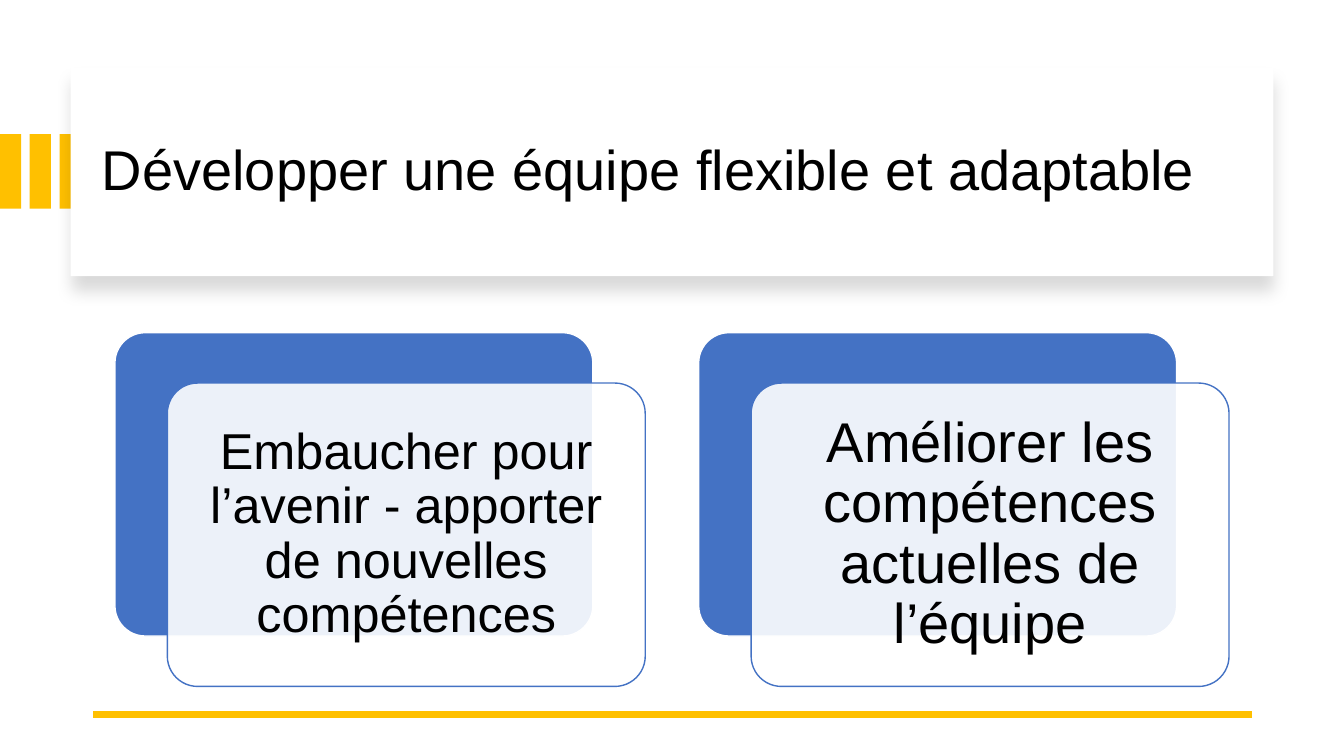
from lxml.etree import SubElement
from pptx import Presentation
from pptx.dml.color import RGBColor
from pptx.enum.shapes import MSO_CONNECTOR, MSO_SHAPE
from pptx.enum.text import MSO_ANCHOR, MSO_AUTO_SIZE, PP_ALIGN
from pptx.oxml.ns import qn
from pptx.util import Inches, Pt

COLORS = {
    "gold": "FFC000",
    "blue": "4472C4",
    "white": "FFFFFF",
    "black": "000000",
}
FONT = "Arial"
CARD_WIDTH, CARD_HEIGHT = 4.74, 3.01
CARD_TOP = 3.3
CARD_OFFSET_X, CARD_OFFSET_Y = 0.52, 0.5
CARDS_LEFT, CARD_PITCH = 1.14, 5.79
CARDS = [
    ("Embaucher pour l’avenir - apporter de nouvelles compétences", 36, 0.15),
    ("Améliorer les compétences actuelles de l’équipe", 40, 0.17),
]


def color(name):
    return RGBColor.from_string(COLORS[name])


def add_box(slide, kind, left, top, width, height, fill, line=None):
    shape = slide.shapes.add_shape(
        kind, Inches(left), Inches(top), Inches(width), Inches(height))
    shape.shadow.inherit = False
    shape.fill.solid()
    shape.fill.fore_color.rgb = color(fill)
    if line:
        shape.line.color.rgb = color(line)
        shape.line.width = Pt(1)
    else:
        shape.line.fill.background()
    return shape


def add_rounded_box(slide, left, top, fill, line):
    shape = add_box(slide, MSO_SHAPE.ROUNDED_RECTANGLE, left, top,
                    CARD_WIDTH, CARD_HEIGHT, fill, line)
    shape.adjustments[0] = 0.1
    return shape


def set_opacity(shape, percent):
    fill_color = shape._element.spPr.find(qn("a:solidFill"))[0]
    SubElement(fill_color, qn("a:alpha"), val=str(percent * 1000))


def add_soft_shadow(shape):
    """Cast a faint black shadow straight down."""
    effects = shape._element.spPr.find(qn("a:effectLst"))
    shadow = SubElement(
        effects, qn("a:outerShdw"), blurRad=str(Pt(11)), dist=str(Pt(10)),
        dir=str(90 * 60000), algn="t", rotWithShape="0")
    shadow_color = SubElement(shadow, qn("a:srgbClr"), val=COLORS["black"])
    SubElement(shadow_color, qn("a:alpha"), val="15000")


def write_text(shape, text, size, alignment, inset=None):
    frame = shape.text_frame
    frame.word_wrap = True
    frame.auto_size = MSO_AUTO_SIZE.NONE
    frame.vertical_anchor = MSO_ANCHOR.MIDDLE
    if inset is not None:
        frame.margin_left = frame.margin_right = Inches(inset)
        frame.margin_top = frame.margin_bottom = Inches(inset)
    paragraph = frame.paragraphs[0]
    paragraph.alignment = alignment
    paragraph.line_spacing = 0.9
    run = paragraph.add_run()
    run.text = text
    run.font.name = FONT
    run.font.size = Pt(size)
    run.font.color.rgb = color("black")


def add_title(slide, text):
    title = slide.shapes.title
    title.left, title.top = Inches(0.91), Inches(0.86)
    title.width, title.height = Inches(12.19), Inches(1.7)
    write_text(title, text, 40, PP_ALIGN.LEFT)
    # Bring the title in front of its panel
    slide.shapes._spTree.append(title._element)


def add_bottom_rule(slide):
    rule = slide.shapes.add_connector(
        MSO_CONNECTOR.STRAIGHT,
        Inches(12.42), Inches(7.09), Inches(0.92), Inches(7.09))
    rule.line.color.rgb = color("gold")
    rule.line.width = Pt(4.5)
    SubElement(rule._element.spPr, qn("a:effectLst"))


def add_card(slide, left, text, size, inset):
    """Add a blue plate with a translucent text card overlapping it."""
    add_rounded_box(slide, left, CARD_TOP, "blue", "white")
    card = add_rounded_box(slide, left + CARD_OFFSET_X,
                           CARD_TOP + CARD_OFFSET_Y, "white", "blue")
    set_opacity(card, 90)
    write_text(card, text, size, PP_ALIGN.CENTER, inset)


def main():
    presentation = Presentation()
    presentation.slide_width = Inches(13.33)
    presentation.slide_height = Inches(7.5)
    slide = presentation.slides.add_slide(presentation.slide_layouts[5])

    for index in range(3):
        add_box(slide, MSO_SHAPE.RECTANGLE, index * 0.295, 1.33,
                0.21, 0.74, "gold")
    panel = add_box(slide, MSO_SHAPE.RECTANGLE, 0.7, 0.67, 11.93, 2.07, "white")
    add_soft_shadow(panel)
    add_title(slide, "Développer une équipe flexible et adaptable")
    add_bottom_rule(slide)
    for index, (text, size, inset) in enumerate(CARDS):
        add_card(slide, CARDS_LEFT + index * CARD_PITCH, text, size, inset)

    presentation.save("out.pptx")


if __name__ == "__main__":
    main()
